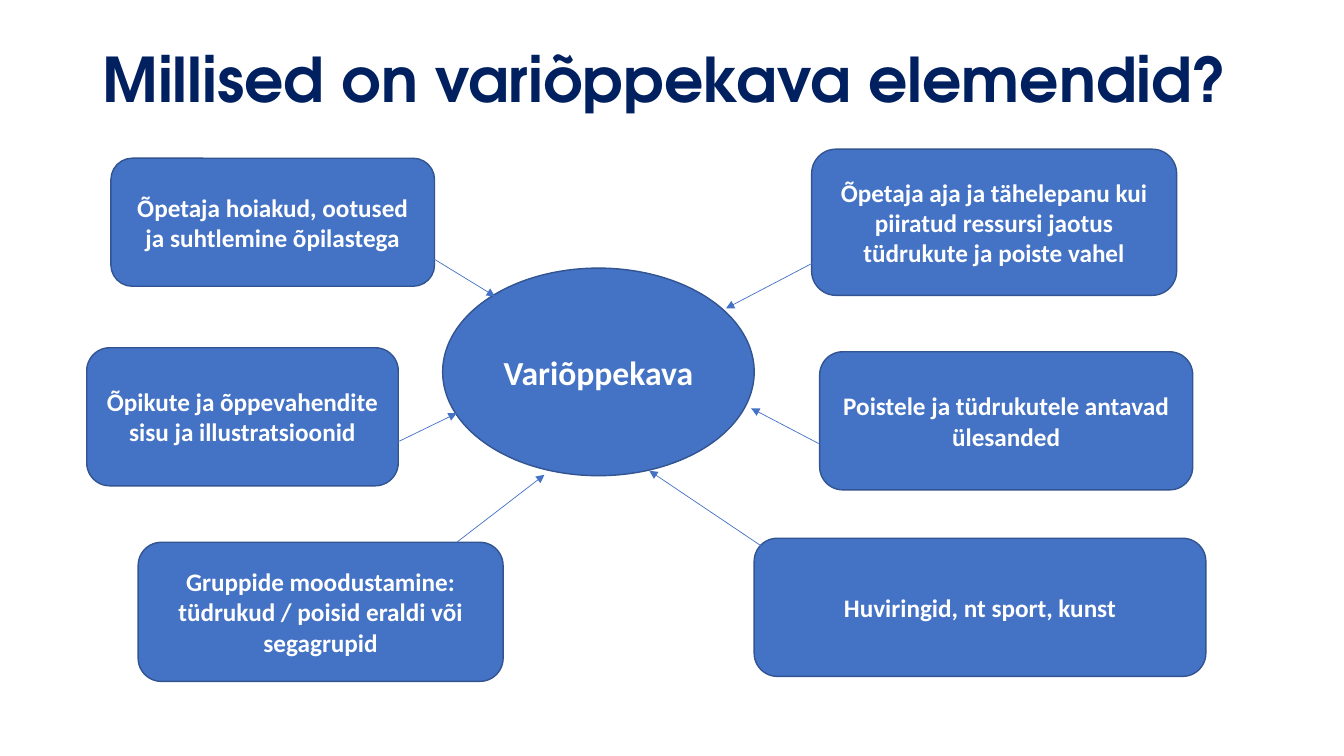
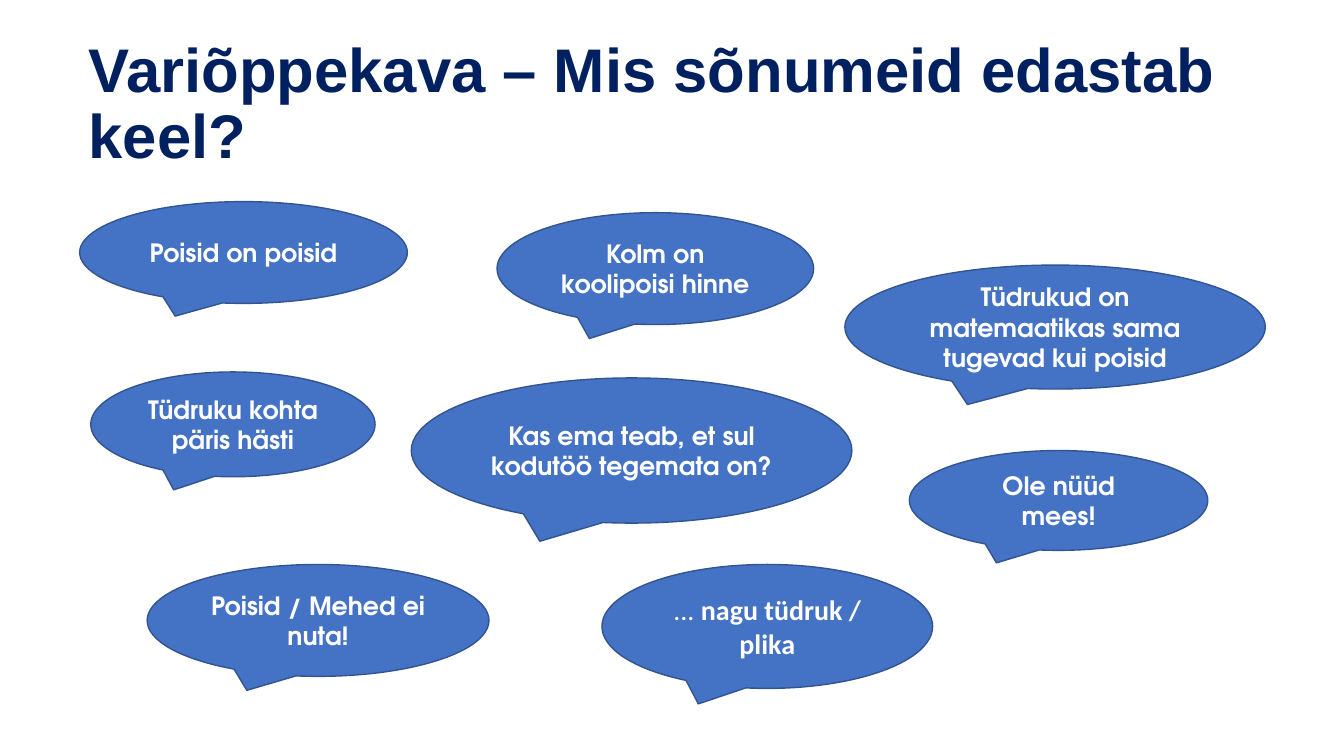
"""Build two slides about the hidden curriculum."""
from dataclasses import dataclass

from lxml import etree
from pptx import Presentation
from pptx import util as u
from pptx.dml.color import RGBColor
from pptx.enum import shapes, text
from pptx.oxml import ns


@dataclass(frozen=True)
class Theme:
    """Colours, fonts and sizes shared by the slides."""
    title: RGBColor = RGBColor(0x00, 0x20, 0x60)
    fill: RGBColor = RGBColor(0x44, 0x72, 0xC4)
    outline: RGBColor = RGBColor(0x32, 0x54, 0x91)
    light: RGBColor = RGBColor(0xFF, 0xFF, 0xFF)
    display: str = "TeX Gyre Adventor"
    body: str = "Calibri"
    plain: str = "Arial"
    title_size: int = 44
    hub_size: int = 24
    quote_size: int = 20
    body_size: int = 18


@dataclass(frozen=True)
class Box:
    """A rectangle in inches."""
    left: float
    top: float
    width: float
    height: float

    def inside(self, left, top, width, height):
        """Return a box whose offset is counted from this one."""
        return Box(self.left + left, self.top + top, width, height)

    def lengths(self):
        """Return the four lengths for python-pptx."""
        return [u.Inches(value) for value in (self.left, self.top, self.width, self.height)]


THEME = Theme()
SLIDE_WIDTH, SLIDE_HEIGHT = 13.33, 7.5

ELEMENTS = [
    ((0.24, 0.09, 3.21, 1.27), ["Õpetaja hoiakud, ootused ja suhtlemine õpilastega"]),
    ((7.19, 0, 3.62, 1.45),
     ["Õpetaja aja ja tähelepanu kui piiratud ressursi jaotus tüdrukute ja poiste vahel"]),
    ((7.27, 2.01, 3.7, 1.37), ["Poistele ja tüdrukutele antavad ülesanded"]),
    ((0, 1.97, 3.09, 1.37), ["Õpikute ja õppevahendite sisu ja illustratsioonid"]),
    ((0.51, 3.9, 3.62, 1.38),
     ["Gruppide moodustamine:", "tüdrukud / poisid eraldi või segagrupid"]),
    ((6.62, 3.86, 4.48, 1.37), ["Huviringid, nt sport, kunst"]),
]
ARROWS = [
    ((3.38, 1.05), (4.05, 1.46)),
    ((2.91, 2.99), (3.67, 2.62)),
    ((7.62, 0.91), (6.34, 1.58)),
    ((7.26, 2.92), (6.59, 2.57)),
    ((3.67, 3.9), (4.54, 3.23)),
    ((6.77, 3.99), (5.58, 3.19)),
]
SAYINGS = [
    ((0, 0, 3.25, 1.01), "Poisid on poisid"),
    ((0.11, 1.69, 2.82, 1.04), "Tüdruku kohta päris hästi"),
    ((4.14, 0.11, 3.14, 1.11), "Kolm on koolipoisi hinne"),
    ((7.59, 0.63, 4.17, 1.23), "Tüdrukud on matemaatikas sama tugevad kui poisid"),
    ((3.29, 1.75, 4.37, 1.44), "Kas ema teab, et sul kodutöö tegemata on?"),
    ((0.67, 3.6, 3.39, 1.11), "Poisid / Mehed ei nuta!"),
    ((8.23, 2.47, 2.96, 0.99), "Ole nüüd mees!"),
]


def add_run(paragraph, words, color=THEME.light, **formats):
    """Add a run with the given font values."""
    run = paragraph.add_run()
    run.text = words
    run.font.color.rgb = color
    values = {"name": THEME.body, "size": THEME.body_size, "bold": True, **formats}
    values["size"] = u.Pt(values["size"])
    for name, value in values.items():
        setattr(run.font, name, value)


def set_frame(frame):
    """Wrap the text and centre it vertically."""
    formats = {"word_wrap": True, "vertical_anchor": text.MSO_ANCHOR.MIDDLE}
    for name, value in formats.items():
        setattr(frame, name, value)


def add_title(slide, box, words, font):
    """Add the slide title."""
    frame = slide.shapes.add_textbox(*box.lengths()).text_frame
    set_frame(frame)
    paragraph = frame.paragraphs[0]
    paragraph.line_spacing = 0.9
    add_run(paragraph, words, THEME.title, name=font, size=THEME.title_size)


def add_node(slide, kind, box, paragraphs):
    """Add a filled shape whose paragraphs are lists of runs."""
    shape = slide.shapes.add_shape(kind, *box.lengths())
    shape.shadow.inherit = False
    shape.fill.solid()
    shape.fill.fore_color.rgb = THEME.fill
    shape.line.color.rgb = THEME.outline
    shape.line.width = u.Pt(1)
    frame = shape.text_frame
    set_frame(frame)
    for index, runs in enumerate(paragraphs):
        paragraph = frame.add_paragraph() if index else frame.paragraphs[0]
        paragraph.alignment = text.PP_ALIGN.CENTER
        for words, formats in runs:
            add_run(paragraph, words, **formats)


def add_arrow(slide, box, start, end):
    """Add a thin arrow between two points counted from the box."""
    points = [u.Inches(value) for x, y in (start, end)
              for value in (box.left + x, box.top + y)]
    arrow = slide.shapes.add_connector(shapes.MSO_CONNECTOR.STRAIGHT, *points)
    arrow.line.color.rgb = THEME.fill
    arrow.line.width = u.Pt(0.5)
    properties = arrow.element.spPr
    line = properties.find(ns.qn("a:ln"))
    etree.SubElement(line, ns.qn("a:tailEnd"), type="triangle")
    etree.SubElement(properties, ns.qn("a:effectLst"))


def add_element_map(slide, box):
    """Add the central term, its elements and their arrows."""
    add_node(slide, shapes.MSO_SHAPE.FLOWCHART_CONNECTOR, box.inside(3.53, 1.18, 3.09, 2.06),
             [[("Variõppekava", {"size": THEME.hub_size})]])
    for place, lines in ELEMENTS:
        add_node(slide, shapes.MSO_SHAPE.FLOWCHART_ALTERNATE_PROCESS, box.inside(*place),
                 [[(line, {})] for line in lines])
    for start, end in ARROWS:
        add_arrow(slide, box, start, end)


def add_speech_bubbles(slide, box):
    """Add the sayings as speech bubbles."""
    quote = {"size": THEME.quote_size}
    bubbles = [(place, [(words, {"name": THEME.display})]) for place, words in SAYINGS]
    bubbles.append(((5.18, 3.6, 3.28, 1.23),
                    [("... ", {**quote, "bold": False}), ("nagu tüdruk / plika", quote)]))
    for place, runs in bubbles:
        add_node(slide, shapes.MSO_SHAPE.OVAL_CALLOUT, box.inside(*place), [runs])


def main():
    """Build and save the presentation."""
    presentation = Presentation()
    presentation.slide_width = u.Inches(SLIDE_WIDTH)
    presentation.slide_height = u.Inches(SLIDE_HEIGHT)
    pages = [
        (Box(0.92, 0.09, 11.5, 1.45), "Millised on variõppekava elemendid?", THEME.display,
         add_element_map, Box(0.86, 1.48, 11.1, 5.28)),
        (Box(0.78, 0.32, 11.5, 1.45), "Variõppekava – Mis sõnumeid edastab keel?", THEME.plain,
         add_speech_bubbles, Box(0.79, 2, 11.76, 4.83)),
    ]
    for title_box, title, font, add_content, content_box in pages:
        slide = presentation.slides.add_slide(presentation.slide_layouts[6])
        add_title(slide, title_box, title, font)
        add_content(slide, content_box)
    presentation.save("out.pptx")


if __name__ == "__main__":
    main()
